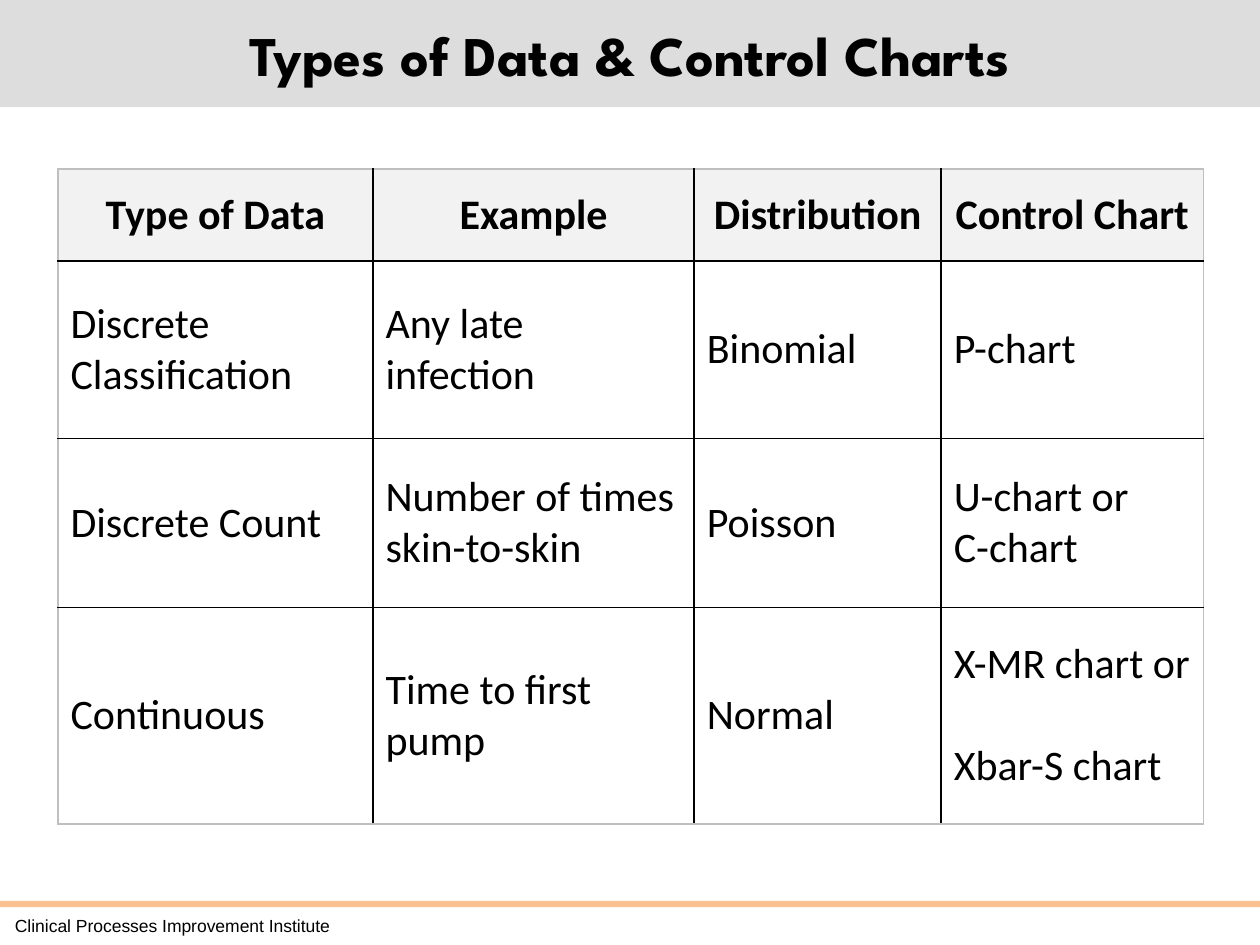
from lxml.etree import SubElement
from pptx import Presentation
from pptx.dml.color import RGBColor
from pptx.enum.shapes import MSO_SHAPE
from pptx.enum.text import MSO_ANCHOR, PP_ALIGN
from pptx.oxml.ns import qn
from pptx.util import Inches, Pt

# Content
TITLE = "Types of Data & Control Charts"
FOOTER = "Clinical Processes Improvement Institute"
ROWS = [
    ["Type of Data", "Example", "Distribution", "Control Chart"],
    ["Discrete Classification", "Any late infection", "Binomial", "P-chart"],
    ["Discrete Count", "Number of times skin-to-skin", "Poisson", "U-chart or\nC-chart"],
    ["Continuous", "Time to first pump", "Normal", "X-MR chart or\nXbar-S chart"],
]
COLUMN_WIDTHS = [2.5, 2.55, 1.96, 2.08]
ROW_HEIGHTS = [0.73, 1.41, 1.34, 1.72]
COLORS = {"text": "000000", "band": "DDDDDD", "rule": "FAC090",
          "header": "F2F2F2", "grid": "000000", "frame": "BFBFBF"}


def color(name):
    return RGBColor.from_string(COLORS[name])


def format_text(frame, font, size, bold=False, align=PP_ALIGN.LEFT):
    for paragraph in frame.paragraphs:
        paragraph.alignment = align
        for run in paragraph.runs:
            run.font.name = font
            run.font.size = Pt(size)
            run.font.bold = bold
            run.font.color.rgb = color("text")


def add_bar(slide, top, height, fill):
    shape = slide.shapes.add_shape(MSO_SHAPE.RECTANGLE, 0, Inches(top), Inches(10), Inches(height))
    shape.shadow.inherit = False
    shape.fill.solid()
    shape.fill.fore_color.rgb = color(fill)
    shape.line.fill.background()


def add_text(slide, text, box, **style):
    frame = slide.shapes.add_textbox(*map(Inches, box)).text_frame
    frame.word_wrap = True
    frame.vertical_anchor = MSO_ANCHOR.MIDDLE
    frame.text = text
    format_text(frame, **style)


def set_borders(cell, outer_sides):
    properties = cell._tc.get_or_add_tcPr()
    for index, side in enumerate("LRTB"):
        line = SubElement(properties, qn(f"a:ln{side}"), w=str(Pt(1)))
        fill = SubElement(line, qn("a:solidFill"))
        name = "frame" if side in outer_sides else "grid"
        SubElement(fill, qn("a:srgbClr"), val=COLORS[name])
        properties.insert(index, line)


def add_data_table(slide):
    size = sum(COLUMN_WIDTHS), sum(ROW_HEIGHTS)
    table = slide.shapes.add_table(len(ROWS), len(COLUMN_WIDTHS),
                                   *map(Inches, (0.46, 1.34, *size))).table
    table.first_row = table.horz_banding = False
    for column, width in zip(table.columns, COLUMN_WIDTHS):
        column.width = Inches(width)
    for row, height in zip(table.rows, ROW_HEIGHTS):
        row.height = Inches(height)

    last_row, last_column = len(ROWS) - 1, len(COLUMN_WIDTHS) - 1
    for r, texts in enumerate(ROWS):
        header = r == 0
        for c, text in enumerate(texts):
            cell = table.cell(r, c)
            cell.text = text
            cell.vertical_anchor = MSO_ANCHOR.MIDDLE
            format_text(cell.text_frame, "Calibri", 24, header,
                        PP_ALIGN.CENTER if header else PP_ALIGN.LEFT)
            if header:
                cell.fill.solid()
                cell.fill.fore_color.rgb = color("header")
            else:
                cell.fill.background()
            edges = {"L": c == 0, "R": c == last_column, "T": header, "B": r == last_row}
            set_borders(cell, [side for side, outer in edges.items() if outer])

    # The two continuous-data charts stand one line apart
    table.cell(last_row, last_column).text_frame.paragraphs[1].space_before = Pt(29)


def main():
    presentation = Presentation()
    presentation.slide_width, presentation.slide_height = Inches(10), Inches(7.5)
    slide = presentation.slides.add_slide(presentation.slide_layouts[6])

    # Footer rule and title band
    add_bar(slide, 7.15, 0.05, "rule")
    add_bar(slide, 0, 0.85, "band")

    # Title, table and footer
    add_text(slide, TITLE, (0.5, 0.14, 9, 0.58), font="League Spartan", size=32,
             bold=True, align=PP_ALIGN.CENTER)
    add_data_table(slide)
    add_text(slide, FOOTER, (0.02, 7.15, 4, 0.39), font="Arial", size=10)

    presentation.save("out.pptx")


if __name__ == "__main__":
    main()
